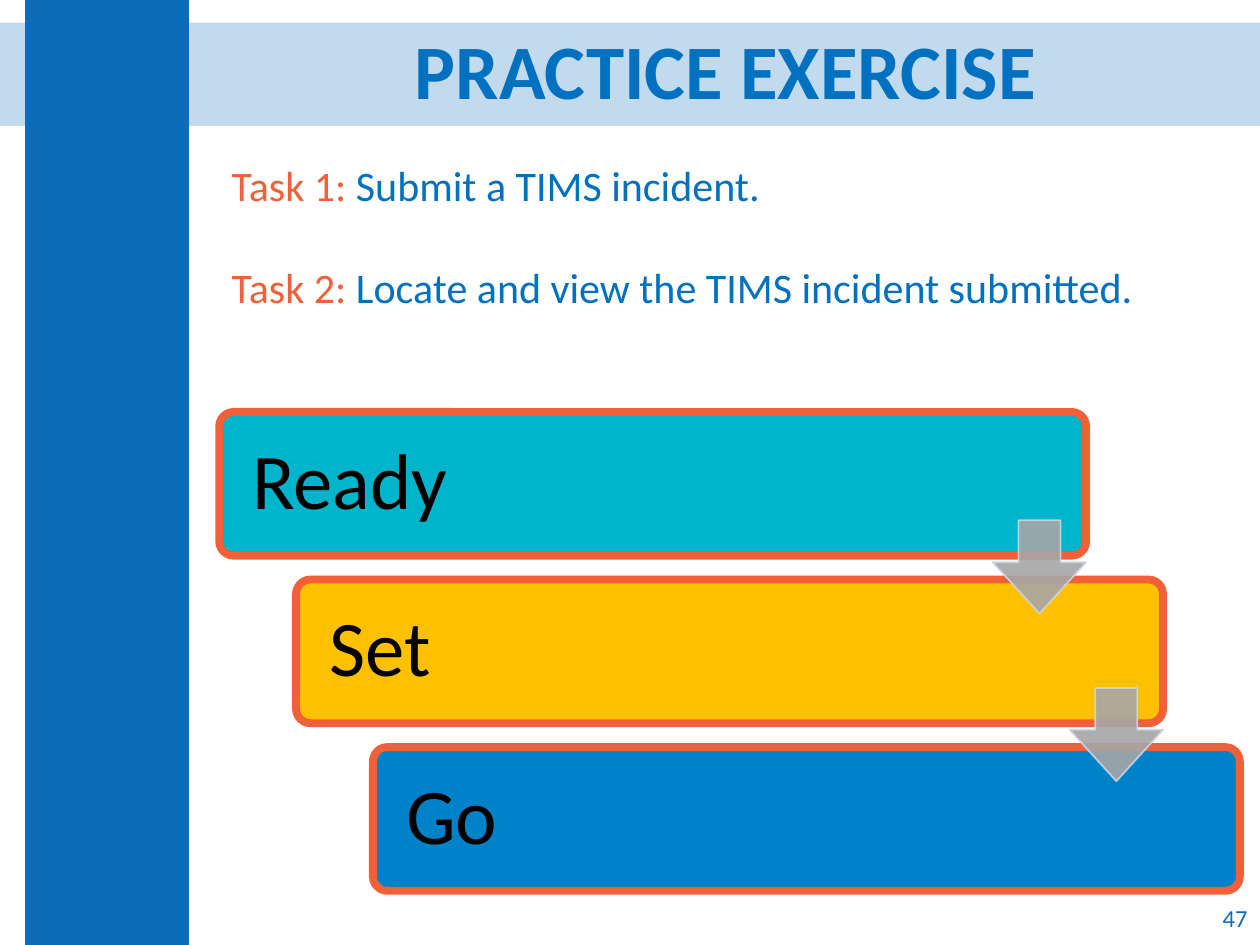
"""Build the practice exercise slide with two tasks and three staggered steps."""
from lxml import etree
from pptx import Presentation
from pptx.dml.color import RGBColor
from pptx.enum import shapes, text
from pptx.oxml import ns
from pptx.util import Inches, Pt

BLUE = RGBColor(0x0D, 0x6C, 0xB9)
TEXT_BLUE = RGBColor(0x00, 0x70, 0xC0)
ORANGE = RGBColor(0xF1, 0x60, 0x38)
TEAL = RGBColor(0x00, 0xB4, 0xCB)
YELLOW = RGBColor(0xFF, 0xC0, 0x00)
STEP_BLUE = RGBColor(0x00, 0x82, 0xC8)
GREY = RGBColor(0xA6, 0xA6, 0xA6)
PALE = RGBColor(0xCC, 0xD4, 0xE6)
BLACK = RGBColor(0, 0, 0)

TITLE = "PRACTICE EXERCISE"
TASKS = [
    ("Task 1:", " Submit a TIMS incident."),
    ("Task 2:", " Locate and view the TIMS incident submitted."),
]
STEPS = [("Ready", TEAL), ("Set", YELLOW), ("Go", STEP_BLUE)]
PAGE_NUMBER = "47"

STEP_LEFT, STEP_TOP, STEP_WIDTH, STEP_HEIGHT = 1.74, 3.27, 6.88, 1.14
SHIFT_X, SHIFT_Y = 0.61, 1.33
ARROW_SIZE, ARROW_DROP = 0.74, 0.86
STEP_INSET = 0.23


def set_values(target, values):
    for name, value in values.items():
        setattr(target, name, value)


def set_alpha(fill, percent):
    for color in fill._xPr.iter(ns.qn("a:srgbClr")):
        etree.SubElement(color, ns.qn("a:alpha"), val=str(percent * 1000))


def add_shape(slide, kind, box, color, line=None, alpha=None, adjustments=()):
    shape = slide.shapes.add_shape(kind, *map(Inches, box))
    shape.shadow.inherit = False
    shape.fill.solid()
    shape.fill.fore_color.rgb = color
    if line:
        shape.line.color.rgb, shape.line.width = line[0], Pt(line[1])
    else:
        shape.line.fill.background()
    if alpha:
        set_alpha(shape.fill, alpha)
    for index, value in enumerate(adjustments):
        shape.adjustments[index] = value
    return shape


def write(shape, paragraphs, size, frame_values, paragraph_values, bold=False):
    frame = shape.text_frame
    set_values(frame, {"word_wrap": True, **frame_values})
    for index, runs in enumerate(paragraphs):
        paragraph = frame.add_paragraph() if index else frame.paragraphs[0]
        set_values(paragraph, paragraph_values)
        if index:
            paragraph.space_before = Pt(size * 1.22)
        for words, color in runs:
            run = paragraph.add_run()
            run.text = words
            set_values(run.font, {"name": "Calibri", "size": Pt(size), "bold": bold})
            run.font.color.rgb = color


def add_text(slide, box, *content, **options):
    write(slide.shapes.add_textbox(*map(Inches, box)), *content, **options)


def add_steps(slide):
    places = [(STEP_LEFT + i * SHIFT_X, STEP_TOP + i * SHIFT_Y) for i in range(len(STEPS))]
    insets = {"margin_left": Inches(STEP_INSET), "margin_right": Inches(STEP_INSET)}
    for (left, top), (label, color) in zip(places, STEPS):
        box = (left, top, STEP_WIDTH, STEP_HEIGHT)
        step = add_shape(slide, shapes.MSO_SHAPE.ROUNDED_RECTANGLE, box, color,
                         line=(ORANGE, 4.5), adjustments=[0.1])
        write(step, [[(label, BLACK)]], 45,
              {"vertical_anchor": text.MSO_ANCHOR.MIDDLE, **insets},
              {"alignment": text.PP_ALIGN.LEFT, "line_spacing": 0.9})
    for left, top in places[:-1]:
        box = (left + STEP_WIDTH - ARROW_SIZE, top + ARROW_DROP, ARROW_SIZE, ARROW_SIZE)
        add_shape(slide, shapes.MSO_SHAPE.DOWN_ARROW, box, GREY,
                  line=(PALE, 1), alpha=90, adjustments=[0.45, 0.55])


def main():
    presentation = Presentation()
    set_values(presentation, {"slide_width": Inches(10), "slide_height": Inches(7.5)})
    slide = presentation.slides.add_slide(presentation.slide_layouts[6])
    middle = {"vertical_anchor": text.MSO_ANCHOR.MIDDLE}

    add_shape(slide, shapes.MSO_SHAPE.RECTANGLE, (0, 0.18, 10, 0.82), BLUE, alpha=25)
    add_shape(slide, shapes.MSO_SHAPE.RECTANGLE, (0.2, 0, 1.3, 7.5), BLUE)
    add_text(slide, (1.81, 0.18, 7.9, 0.82), [[(TITLE, TEXT_BLUE)]], 44, middle,
             {"alignment": text.PP_ALIGN.CENTER, "line_spacing": 0.9}, bold=True)
    tasks = [[(name, ORANGE), (action, TEXT_BLUE)] for name, action in TASKS]
    add_text(slide, (1.74, 1.22, 8.03, 1.44), tasks, 24, {}, {})
    add_steps(slide)
    add_text(slide, (7.75, 7.08, 2.25, 0.4), [[(PAGE_NUMBER, BLUE)]], 14, middle,
             {"alignment": text.PP_ALIGN.RIGHT})
    presentation.save("out.pptx")


if __name__ == "__main__":
    main()
